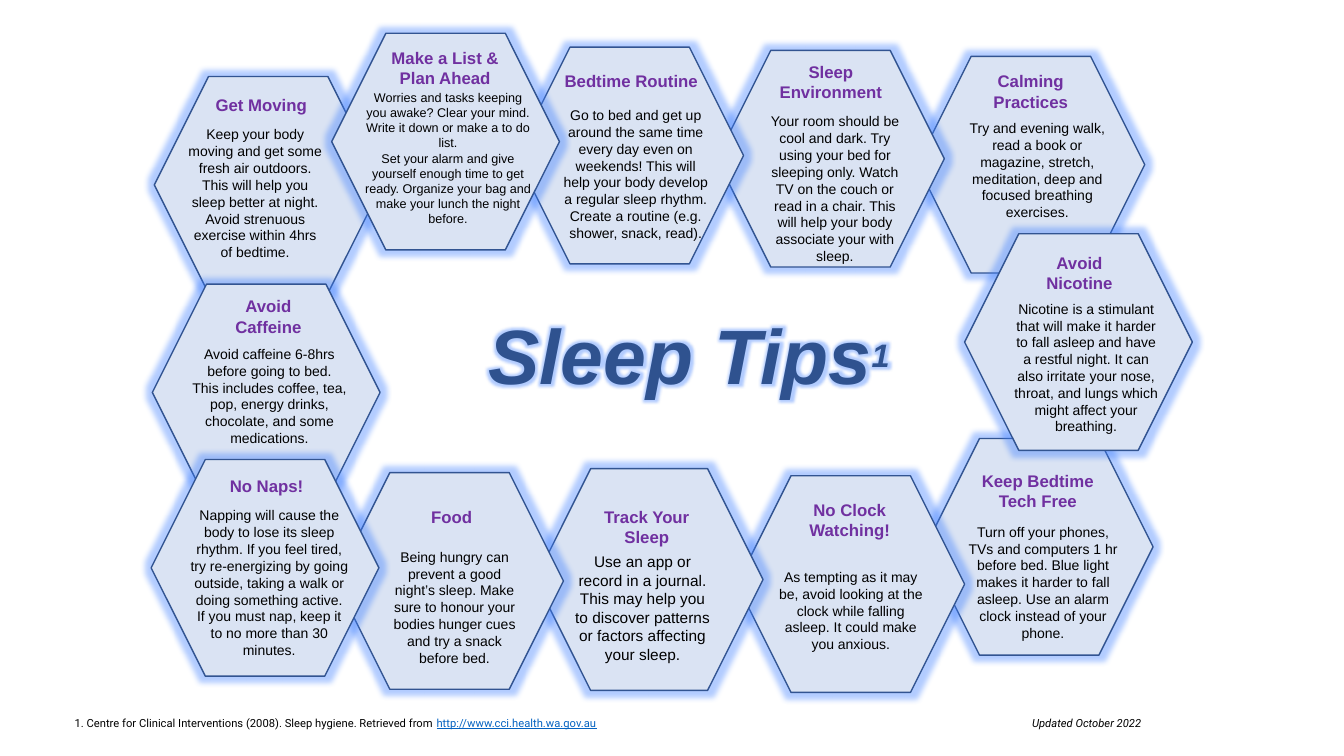
from lxml.etree import SubElement
from pptx import Presentation
from pptx.dml.color import RGBColor
from pptx.enum.shapes import MSO_SHAPE as Shape
from pptx.enum.text import MSO_ANCHOR as Anchor, PP_ALIGN as Align
from pptx.oxml import parse_xml
from pptx.oxml.ns import nsdecls, qn
from pptx.util import Cm, Pt

HEX_FILL, HEX_LINE = "DAE3F3", "325491"
PURPLE, NAVY, GLOW = "7030A0", "2F528F", "4080FF"
BLACK, WHITE, LINK = "000000", "FFFFFF", "0563C1"
HEX_WIDTH, HEX_HEIGHT = 5.74, 5.46
GLOW_RADIUS = 0.28

# (hexagon left, top), heading box, heading, body box, body paragraphs, options
# Heading and body boxes are left, top, width, height inside the hexagon, in cm.
TIPS = [
    ((23.32, 11.05), (1.02, 0.69, 3.63, 1.47), ["Keep Bedtime Tech Free"],
     (0.74, 2.01, 4.45, 3.38),
     ["Turn off your phones, TVs and computers 1 hr before bed. Blue light makes it "
      "harder to fall asleep. Use an alarm clock instead of your phone."], {}),
    ((18.57, 11.99), (0.76, 0.48, 4.17, 1.27), ["No Clock Watching!"],
     (0.66, 2.21, 4.42, 2.69),
     ["As tempting as it may be, avoid looking at the clock while falling asleep. "
      "It could make you anxious."], {}),
    ((13.49, 11.81), (1.12, 0.84, 3.38, 1.32), ["Track Your Sleep"],
     (0.66, 1.98, 4.09, 3.3),
     ["Use an app or record in a journal. This may help you to discover patterns or "
      "factors affecting your sleep."], {"body_size": 11, "height": 5.59}),
    ((8.46, 11.91), (1.3, 0.74, 3.25, 0.79), ["Food"],
     (1.19, 1.78, 3.61, 3.23),
     ["Being hungry can prevent a good night’s sleep. Make sure to honour your bodies "
      "hunger cues and try a snack before bed."], {}),
    ((3.89, 1.93), (1.07, 0.33, 3.25, 0.79), ["Get Moving"],
     (0.56, 1.12, 3.96, 3.66),
     ["Keep your body moving and get some fresh air outdoors. This will help you sleep "
      "better at night.",
      "Avoid strenuous exercise within 4hrs of bedtime."], {}),
    ((3.84, 7.16), (1.3, 0.18, 3.25, 1.4), ["Avoid Caffeine"],
     (0.64, 1.42, 4.62, 3),
     ["Avoid caffeine 6-8hrs before going to bed.",
      "This includes coffee, tea, pop, energy drinks, chocolate, and some medications."], {}),
    ((23.11, 1.42), (0.91, 0.25, 3.91, 1.5), ["Calming Practices"],
     (0.91, 1.47, 4.24, 3),
     ["Try and evening walk, read a book or magazine, stretch, meditation, deep and "
      "focused breathing exercises."], {}),
    ((18.06, 1.27), (0.96, 0.15, 3.84, 1.32), ["Sleep Environment"],
     (0.91, 1.45, 4.14, 3.86),
     ["Your room should be cool and dark. Try using your bed for sleeping only. Watch TV "
      "on the couch or read in a chair. This will help your body associate your with "
      "sleep."], {}),
    ((13, 1.19), (0.74, 0.48, 4.34, 0.79), ["Bedtime Routine"],
     (0.91, 1.37, 4.22, 3.96),
     ["Go to bed and get up around the same time every day even on weekends! This will "
      "help your body develop a regular sleep rhythm.",
      "Create a routine (e.g. shower, snack, read)."], {}),
    ((8.36, 0.84), (0.97, 0.23, 3.78, 1.35), ["Make a List &", "Plan Ahead"],
     (0.58, 1.3, 4.7, 4.04),
     ["Worries and tasks keeping you awake? Clear your mind. Write it down or make a to "
      "do list.",
      "Set your alarm and give yourself enough time to get ready. Organize your bag and "
      "make your lunch the night before."], {"body_size": 9}),
    ((3.81, 11.58), (1.55, 0.28, 2.72, 1.14), ["No Naps!"],
     (0.74, 1.07, 4.47, 4.01),
     ["Napping will cause the body to lose its sleep rhythm. If you feel tired, try "
      "re-energizing by going outside, taking a walk or doing something active. If you "
      "must nap, keep it to no more than 30 minutes."], {}),
    ((24.31, 5.89), (1.27, 0.36, 3.25, 1.4), ["Avoid Nicotine"],
     (0.99, 1.55, 4.14, 3.61),
     ["Nicotine is a stimulant that will make it harder to fall asleep and have a restful "
      "night. It can also irritate your nose, throat, and lungs which might affect your "
      "breathing."], {}),
]


def rgb(value):
    return RGBColor.from_string(value)


def add_glow(effects):
    """Put a translucent blue halo into an effect list."""
    glow = SubElement(effects, qn("a:glow"), rad=str(Cm(GLOW_RADIUS)))
    color = SubElement(glow, qn("a:srgbClr"), val=GLOW)
    SubElement(color, qn("a:alpha"), val="40000")


def add_text(paragraph, text, size=10, color=BLACK, font="Arial", bold=False,
             italic=False, underline=False, baseline=0, glow=False):
    run = paragraph.add_run()
    run.text = text
    run.font.size, run.font.name = Pt(size), font
    run.font.bold, run.font.italic, run.font.underline = bold, italic, underline
    run.font.color.rgb = rgb(color)
    properties = run.font._element
    if baseline:
        properties.set("baseline", str(baseline * 1000))
    if glow:
        effects = parse_xml(f"<a:effectLst {nsdecls('a')}/>")
        add_glow(effects)
        properties.find(qn("a:solidFill")).addnext(effects)


def add_text_box(shapes, box, paragraphs, **text_format):
    """Add a centred box; each paragraph is one string."""
    frame = shapes.add_textbox(*map(Cm, box)).text_frame
    frame.word_wrap = True
    for index, text in enumerate(paragraphs):
        paragraph = frame.add_paragraph() if index else frame.paragraphs[0]
        paragraph.alignment = Align.CENTER
        add_text(paragraph, text, **text_format)
    return frame


def add_tip(slide, corner, heading_box, heading, body_box, body,
            body_size=10, height=HEX_HEIGHT):
    left, top = corner
    tip = slide.shapes.add_group_shape().shapes
    hexagon = tip.add_shape(Shape.HEXAGON, *map(Cm, (left, top, HEX_WIDTH, height)))
    hexagon.fill.solid()
    hexagon.fill.fore_color.rgb = rgb(HEX_FILL)
    hexagon.line.color.rgb = rgb(HEX_LINE)
    hexagon.line.width = Pt(1)
    hexagon.shadow.inherit = False
    add_glow(hexagon._element.spPr.find(qn("a:effectLst")))

    def inside(box):
        dx, dy, *size = box
        return (left + dx, top + dy, *size)

    add_text_box(tip, inside(heading_box), heading, size=12, color=PURPLE, bold=True)
    add_text_box(tip, inside(body_box), body, size=body_size)


def add_title(slide, box):
    style = dict(color=NAVY, bold=True, italic=True, glow=True)
    frame = add_text_box(slide.shapes, box, ["Sleep Tips"], size=55, **style)
    add_text(frame.paragraphs[0], "1", size=40, baseline=30, **style)


def add_footer(slide, box):
    footer = slide.shapes.add_shape(Shape.RECTANGLE, *map(Cm, box))
    footer.fill.solid()
    footer.fill.fore_color.rgb = rgb(WHITE)
    footer.line.fill.background()
    footer.shadow.inherit = False
    frame = footer.text_frame
    frame.word_wrap = True
    frame.vertical_anchor = Anchor.TOP
    source = frame.paragraphs[0]
    source.alignment = Align.LEFT
    tabs = SubElement(source._p.get_or_add_pPr(), qn("a:tabLst"))
    SubElement(tabs, qn("a:tab"), pos=str(Cm(24.13)), algn="l")
    style = dict(size=8, font="Roboto")
    add_text(source, "1. Centre for Clinical Interventions (2008). Sleep hygiene. "
                     "Retrieved from ", **style)
    add_text(source, "http://www.cci.health.wa.gov.au", color=LINK, underline=True, **style)
    add_text(source, "\t", **style)
    add_text(source, "Updated October 2022", italic=True, **style)


def main():
    deck = Presentation()
    deck.slide_width, deck.slide_height = Cm(33.87), Cm(19.05)
    slide = deck.slides.add_slide(deck.slide_layouts[6])
    for *parts, options in TIPS:
        add_tip(slide, *parts, **options)
    add_title(slide, (11.89, 7.62, 10.95, 3.76))
    add_footer(slide, (1.63, 17.93, 27.84, 0.61))
    deck.save("out.pptx")


if __name__ == "__main__":
    main()
